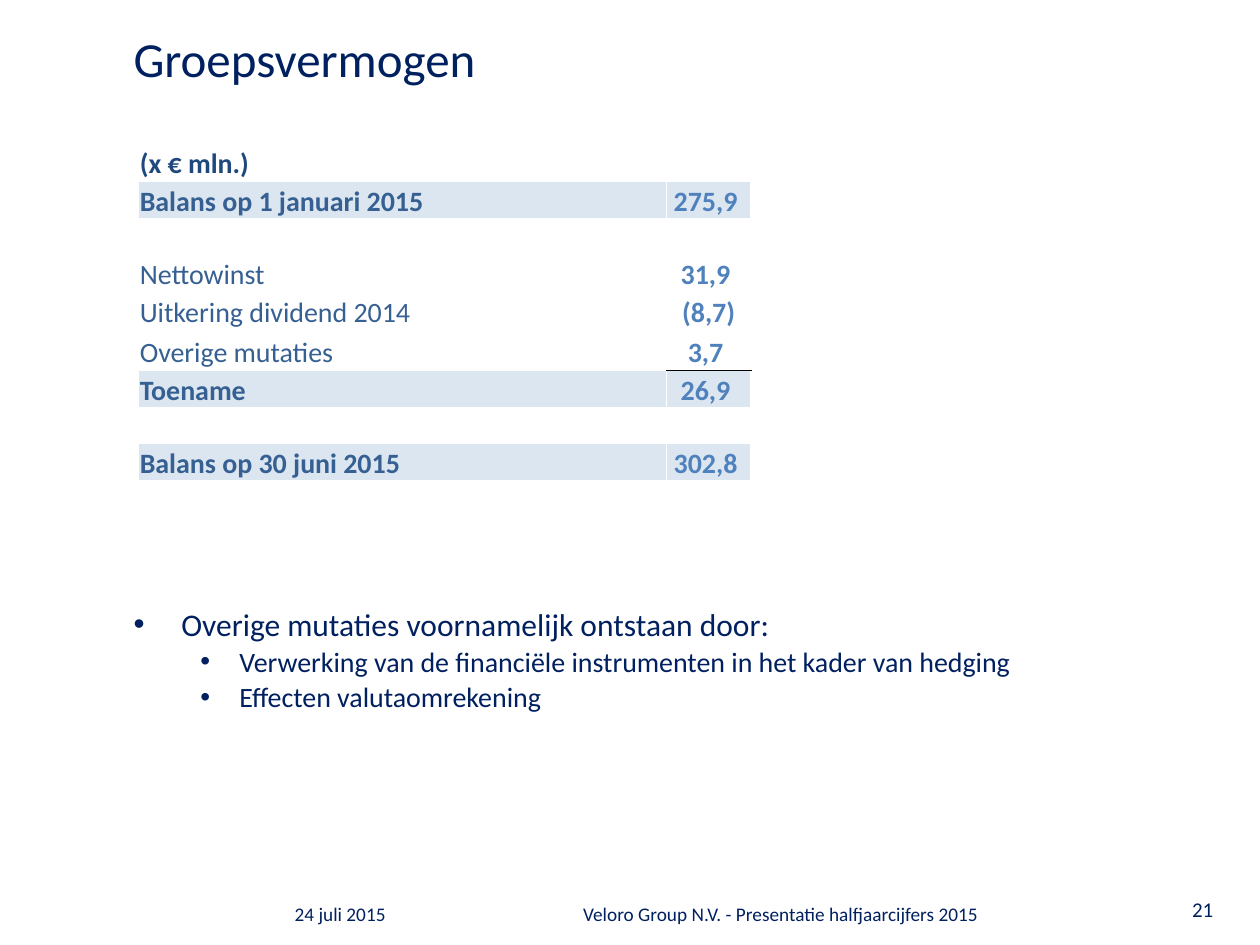
import pptx
import pptx.dml.color
import pptx.enum.text
import pptx.oxml.ns
import pptx.util
from lxml import etree

Inches, Pt = pptx.util.Inches, pptx.util.Pt
ALIGN = pptx.enum.text.PP_ALIGN
ANCHOR = pptx.enum.text.MSO_ANCHOR
qn = pptx.oxml.ns.qn

# Content
TITLE = "Groepsvermogen"
# label, amount, style of the row
EQUITY = [
    ("(x € mln.)", "", "unit"),
    ("Balans op 1 januari 2015", "275,9 ", "total"),
    ("", "", "item"),
    ("Nettowinst", "31,9 ", "item"),
    ("Uitkering dividend 2014", "(8,7)", "item"),
    ("Overige mutaties", "3,7 ", "item"),
    ("Toename", "26,9 ", "total"),
    ("", "", "item"),
    ("Balans op 30 juni 2015", "302,8 ", "total"),
]
ROW_HEIGHTS = [0.29, 0.3, 0.28, 0.3, 0.3, 0.32, 0.3, 0.28, 0.3]
COLUMN_WIDTHS = [4.19, 0.67]
SUM_ROW = 6  # a rule separates this row's amount from the items above
NOTES = [
    (0, "Overige mutaties voornamelijk ontstaan door:"),
    (1, "Verwerking van de financiële instrumenten in het kader van hedging"),
    (1, "Effecten valutaomrekening"),
]
# text, left, top, width, height, size, alignment
FOOTERS = [
    ("24 juli 2015", 2.24, 7.11, 1.69, 0.33, 11, ALIGN.LEFT),
    ("Veloro Group N.V. - Presentatie halfjaarcijfers 2015",
     4.53, 7.11, 4.57, 0.33, 11, ALIGN.LEFT),
    ("21", 9.17, 7.07, 0.75, 0.37, 12, ALIGN.CENTER),
]

THEME = {
    "font": "Calibri",
    "text": "002060",
    "amount": "4F81BD",
    "rule": "000000",
    "title_size": 28,
    "table_size": 16,
    # row style: label colour, bold label, fill
    "rows": {
        "unit": ("1F497D", True, "FFFFFF"),
        "item": ("366092", False, "FFFFFF"),
        "total": ("366092", True, "DCE6F1"),
    },
    # note level: size, text indent, hanging indent, line spacing
    "notes": [(18, 0.38, 0.38, Pt(20)), (16, 0.84, 0.31, 0.9)],
}


def rgb(code):
    return pptx.dml.color.RGBColor.from_string(code)


def add_run(paragraph, text, size, color=THEME["text"], bold=False):
    run = paragraph.add_run()
    run.text = text
    run.font.name = THEME["font"]
    run.font.size = Pt(size)
    run.font.bold = bold
    run.font.color.rgb = rgb(color)


def place(placeholder, left, top, width, height):
    placeholder.left, placeholder.top = Inches(left), Inches(top)
    placeholder.width, placeholder.height = Inches(width), Inches(height)
    frame = placeholder.text_frame
    frame.margin_left = frame.margin_right = 0
    frame.margin_top = frame.margin_bottom = 0
    frame.vertical_anchor = ANCHOR.TOP
    frame.auto_size = pptx.enum.text.MSO_AUTO_SIZE.NONE
    frame.word_wrap = True
    return frame


def fill_cell(cell, text, color, bold, fill, alignment):
    cell.fill.solid()
    cell.fill.fore_color.rgb = rgb(fill)
    cell.margin_left = cell.margin_right = cell.margin_top = Inches(0.01)
    cell.margin_bottom = 0
    cell.vertical_anchor = ANCHOR.BOTTOM
    paragraph = cell.text_frame.paragraphs[0]
    paragraph.alignment = alignment
    if text:
        add_run(paragraph, text, THEME["table_size"], color, bold)
    else:  # keeps an empty row at its own height
        etree.SubElement(paragraph._p, qn("a:endParaRPr"),
                         sz=str(THEME["table_size"] * 100))


def add_border(cell, side):
    line = etree.Element(qn("a:" + side), w=str(Pt(0.5)))
    solid = etree.SubElement(line, qn("a:solidFill"))
    etree.SubElement(solid, qn("a:srgbClr"), val=THEME["rule"])
    cell._tc.get_or_add_tcPr().insert(0, line)


def add_bullet(paragraph, indent, hanging):
    properties = paragraph._p.get_or_add_pPr()
    properties.set("marL", str(Inches(indent)))
    properties.set("indent", str(-Inches(hanging)))
    etree.SubElement(properties, qn("a:buFont"), typeface="Arial")
    etree.SubElement(properties, qn("a:buChar"), char="•")


def main():
    deck = pptx.Presentation()
    deck.slide_width, deck.slide_height = Inches(10), Inches(7.5)
    slide = deck.slides.add_slide(deck.slide_layouts[1])

    # Title
    title = place(slide.shapes.title, 1.06, 0.28, 8.66, 0.94).paragraphs[0]
    title.alignment = ALIGN.LEFT
    title.line_spacing = Pt(30)
    title.space_before = Pt(0)
    add_run(title, TITLE, THEME["title_size"])

    # Explanatory notes
    notes = place(slide.placeholders[1], 1.06, 4.82, 8.66, 1.92)
    for number, (level, text) in enumerate(NOTES):
        note = notes.add_paragraph() if number else notes.paragraphs[0]
        size, indent, hanging, spacing = THEME["notes"][level]
        note.level = level
        add_bullet(note, indent, hanging)
        note.line_spacing = spacing
        note.space_before = Pt(0.2 * size if number else 0)
        add_run(note, text, size)

    # Footer
    for text, left, top, width, height, size, alignment in FOOTERS:
        footer = slide.shapes.add_textbox(
            Inches(left), Inches(top), Inches(width), Inches(height)).text_frame
        footer.word_wrap = True
        footer.paragraphs[0].alignment = alignment
        add_run(footer.paragraphs[0], text, size)

    # Equity table
    equity = slide.shapes.add_table(
        len(EQUITY), len(COLUMN_WIDTHS), Inches(1.1), Inches(1.15),
        Inches(sum(COLUMN_WIDTHS)), Inches(sum(ROW_HEIGHTS))).table
    equity.first_row = equity.horz_banding = False
    for column, width in zip(equity.columns, COLUMN_WIDTHS):
        column.width = Inches(width)
    for row, height, (label, amount, style) in zip(equity.rows, ROW_HEIGHTS, EQUITY):
        row.height = Inches(height)
        color, bold, fill = THEME["rows"][style]
        fill_cell(row.cells[0], label, color, bold, fill, ALIGN.LEFT)
        fill_cell(row.cells[1], amount, THEME["amount"], True, fill, ALIGN.CENTER)
    add_border(equity.cell(SUM_ROW - 1, 1), "lnB")
    add_border(equity.cell(SUM_ROW, 1), "lnT")

    deck.save("out.pptx")


if __name__ == "__main__":
    main()
